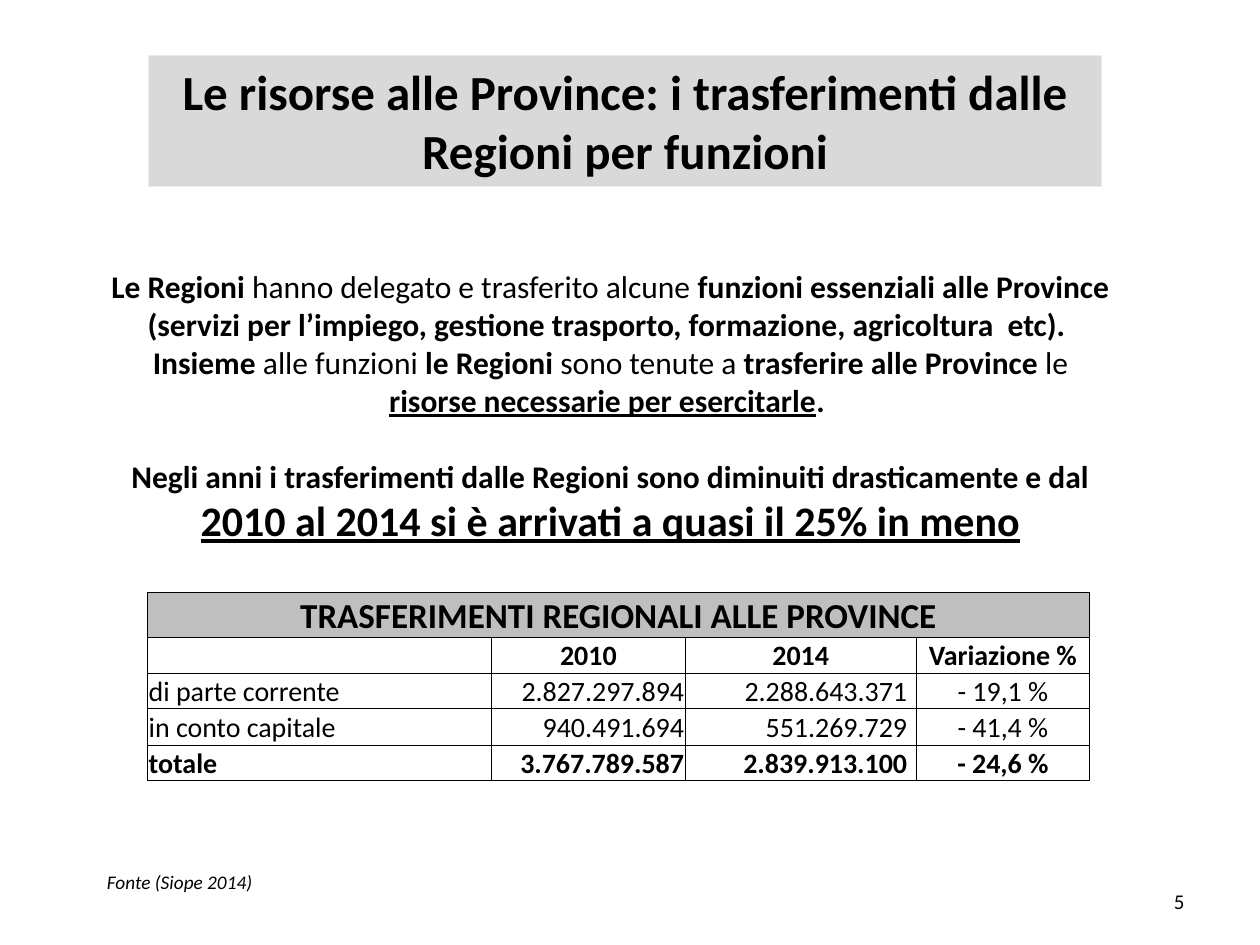
from lxml import etree
from pptx import Presentation
from pptx.dml.color import RGBColor
from pptx.enum import text
from pptx.oxml import ns
from pptx.util import Inches, Pt

BLACK = RGBColor(0x00, 0x00, 0x00)
WHITE = RGBColor(0xFF, 0xFF, 0xFF)
TITLE_GREY = RGBColor(0xD9, 0xD9, 0xD9)
TITLE_EDGE = RGBColor(0xEE, 0xEC, 0xE1)
HEADER_GREY = RGBColor(0xBF, 0xBF, 0xBF)

LEFT, CENTER, RIGHT = text.PP_ALIGN.LEFT, text.PP_ALIGN.CENTER, text.PP_ALIGN.RIGHT
BOLD = {"bold": True}
PLAIN = {"bold": False}
UNDERLINED = {"bold": True, "underline": True}

DELEGATED = [
    ("Le Regioni ", BOLD),
    ("hanno delegato e trasferito alcune", PLAIN),
    (" funzioni essenziali alle Province (servizi per l’impiego, gestione trasporto, "
     "formazione, agricoltura  etc). ", BOLD),
]
OBLIGATION = [
    ("Insieme ", BOLD),
    ("alle funzioni ", PLAIN),
    ("le Regioni ", BOLD),
    ("sono tenute a", PLAIN),
    (" trasferire alle Province ", BOLD),
    ("le ", PLAIN),
    ("risorse necessarie per esercitarle", UNDERLINED),
    (". ", BOLD),
]
DECLINE = [
    ("Negli anni i trasferimenti dalle Regioni sono diminuiti drasticamente e dal ", BOLD),
    ("2010 al 2014 si è arrivati a quasi il 25% in meno", {**UNDERLINED, "size": Pt(24)}),
]
TRANSFERS = [
    ("", "2010", "2014", "Variazione %"),
    ("di parte corrente", "2.827.297.894", "2.288.643.371", "- 19,1 %"),
    ("in conto capitale", "940.491.694", "551.269.729", "- 41,4 %"),
    ("totale", "3.767.789.587", "2.839.913.100", "- 24,6 %"),
]


def apply_format(target, values):
    for name, value in values.items():
        setattr(target, name, value)


def place(part, box):
    names = ("left", "top", "width", "height")
    apply_format(part, {name: Inches(length) for name, length in zip(names, box)})


def write(paragraph, pieces, size, align=LEFT):
    paragraph.alignment = align
    for words, values in pieces:
        run = paragraph.add_run()
        run.text = words
        apply_format(run.font, {"name": "Calibri", "size": Pt(size), **values})
        run.font.color.rgb = BLACK


def add_title(slide, box):
    title = slide.shapes.title
    place(title, box)
    title.fill.solid()
    title.fill.fore_color.rgb = TITLE_GREY
    title.line.color.rgb = TITLE_EDGE
    title.line.width = Pt(0.75)
    apply_format(title.text_frame, {"auto_size": text.MSO_AUTO_SIZE.NONE,
                                    "vertical_anchor": text.MSO_ANCHOR.TOP})
    heading = "Le risorse alle Province: i trasferimenti dalle Regioni per funzioni"
    write(title.text_frame.paragraphs[0], [(heading, BOLD)], 28, CENTER)


def add_explanation(slide, box):
    explanation = slide.placeholders[1]
    place(explanation, box)
    frame = explanation.text_frame
    frame.auto_size = text.MSO_AUTO_SIZE.NONE
    for index, (pieces, gap) in enumerate([(DELEGATED, 0), (OBLIGATION, 0), (DECLINE, 22)]):
        paragraph = frame.add_paragraph() if index else frame.paragraphs[0]
        write(paragraph, pieces, 18, CENTER)
        paragraph.space_before = Pt(gap)
        properties = paragraph._p.get_or_add_pPr()
        properties.set("marL", "0")
        properties.set("indent", "0")
        etree.SubElement(properties, ns.qn("a:buNone"))


def add_caption(slide, box, words, size, align, anchor, values):
    caption = slide.shapes.add_textbox(*map(Inches, box))
    apply_format(caption.text_frame, {"word_wrap": True, "vertical_anchor": anchor})
    write(caption.text_frame.paragraphs[0], [(words, values)], size, align)


def format_cell(cell, words, size, values, align, fill=WHITE, right=0.01):
    apply_format(cell, {"margin_left": Inches(0.01), "margin_right": Inches(right),
                        "margin_top": Inches(0.01), "margin_bottom": 0,
                        "vertical_anchor": text.MSO_ANCHOR.BOTTOM})
    properties = cell._tc.get_or_add_tcPr()
    for side in ("a:lnL", "a:lnR", "a:lnT", "a:lnB"):
        edge = etree.SubElement(properties, ns.qn(side), w=str(Pt(0.5)))
        colour = etree.SubElement(edge, ns.qn("a:solidFill"))
        etree.SubElement(colour, ns.qn("a:srgbClr"), val=str(BLACK))
    cell.fill.solid()
    cell.fill.fore_color.rgb = fill
    paragraph = cell.text_frame.paragraphs[0]
    if words:
        write(paragraph, [(words, values)], size, align)
    else:
        paragraph._p.get_or_add_endParaRPr().set("sz", str(size * 100))


def add_transfers(slide, box):
    columns = (2.73, 1.54, 1.83, 1.38)
    rows = (0.36, 0.27, 0.28, 0.29, 0.28)
    table = slide.shapes.add_table(len(rows), len(columns), *map(Inches, box)).table
    apply_format(table, {"first_row": False, "horz_banding": False})
    for column, width in zip(table.columns, columns):
        column.width = Inches(width)
    for row, height in zip(table.rows, rows):
        row.height = Inches(height)

    for index in range(len(columns)):
        heading = "" if index else "TRASFERIMENTI REGIONALI ALLE PROVINCE"
        format_cell(table.cell(0, index), heading, 20, BOLD, CENTER, HEADER_GREY)
    table.cell(0, 0).merge(table.cell(0, len(columns) - 1))

    for r, record in enumerate(TRANSFERS, 1):
        is_header = r == 1
        values = BOLD if r in (1, len(TRANSFERS)) else PLAIN
        aligns = [CENTER] * 4 if is_header else (LEFT, RIGHT, RIGHT, CENTER)
        for c, (words, align) in enumerate(zip(record, aligns)):
            right = 0.07 if c == 2 and not is_header else 0.01
            format_cell(table.cell(r, c), words, 16, values, align, right=right)


def main():
    deck = Presentation()
    apply_format(deck, {"slide_width": Inches(10), "slide_height": Inches(7.5)})
    slide = deck.slides.add_slide(deck.slide_layouts[1])
    add_title(slide, (1.18, 0.44, 7.56, 1.04))
    add_explanation(slide, (0.75, 2.07, 8.19, 2.63))
    add_transfers(slide, (1.17, 4.7, 7.48, 1.48))
    add_caption(slide, (0.75, 6.86, 3.46, 0.29), "Fonte (Siope 2014)", 11, LEFT,
                text.MSO_ANCHOR.TOP, {"italic": True})
    add_caption(slide, (7.17, 6.95, 2.33, 0.4), "5", 12, RIGHT, text.MSO_ANCHOR.MIDDLE, {})
    deck.save("out.pptx")


if __name__ == "__main__":
    main()
